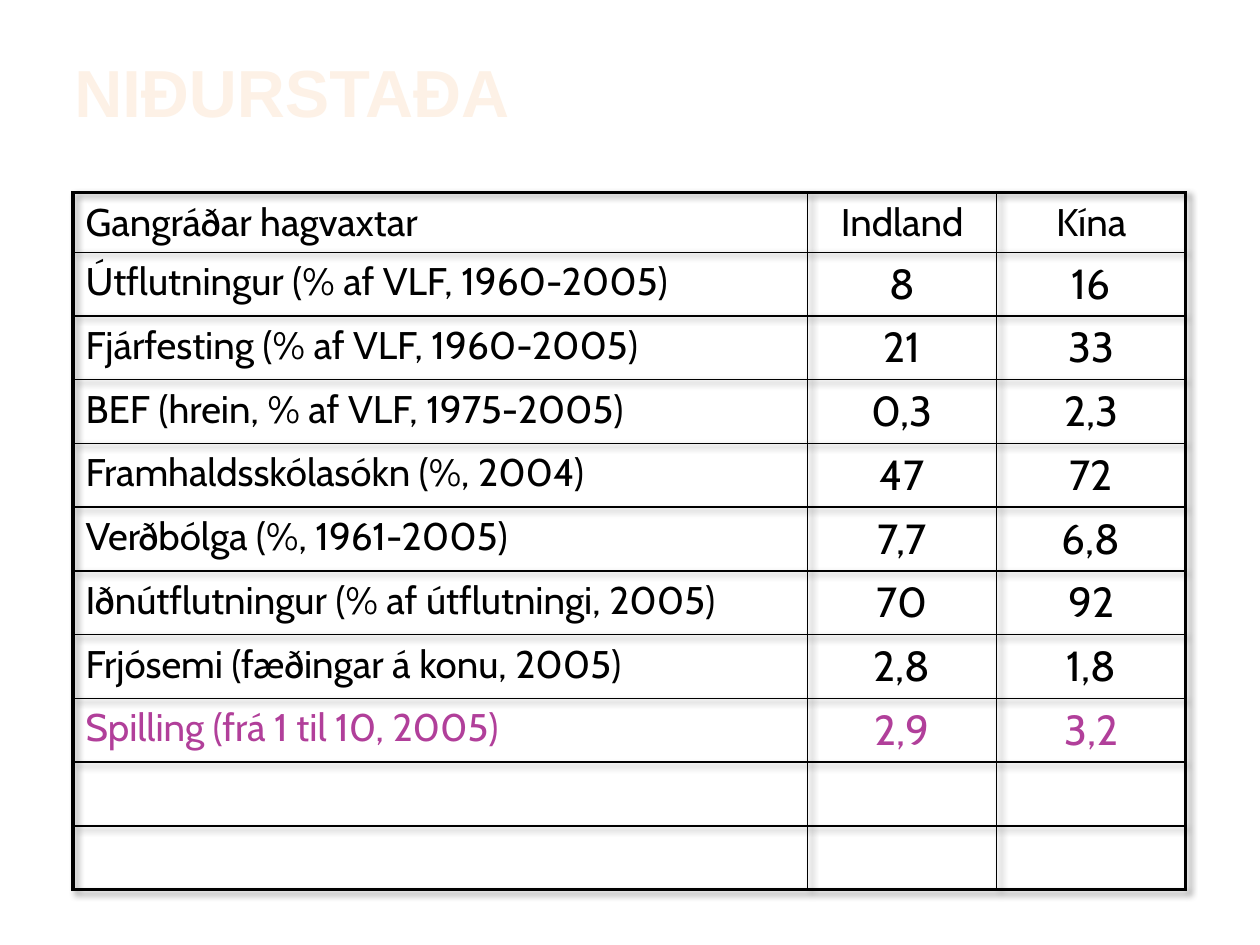
from lxml import etree
from pptx import Presentation
from pptx.dml.color import RGBColor
from pptx.enum.text import MSO_ANCHOR, PP_ALIGN
from pptx.oxml.ns import qn
from pptx.util import Inches, Pt

LEFT, CENTER = PP_ALIGN.LEFT, PP_ALIGN.CENTER
BOTTOM = MSO_ANCHOR.BOTTOM
BLACK, PLUM, CREAM = "000000", "B13F9A", "FDF1E6"
THIN, THICK = 1, 2.25
WIDTHS = [5.83, 1.5, 1.5]
HEAD, TOTAL = 0.47, 5.53
ROWS = [
    ("Gangráðar hagvaxtar", "Indland", "Kína"),
    ("Útflutningur (% af VLF, 1960-2005)", "8", "16"),
    ("Fjárfesting (% af VLF, 1960-2005)", "21", "33"),
    ("BEF (hrein, % af VLF, 1975-2005)", "0,3", "2,3"),
    ("Framhaldsskólasókn (%, 2004)", "47", "72"),
    ("Verðbólga (%, 1961-2005)", "7,7", "6,8"),
    ("Iðnútflutningur (% af útflutningi, 2005)", "70", "92"),
    ("Frjósemi (fæðingar á konu, 2005)", "2,8", "1,8"),
    ("Spilling (frá 1 til 10, 2005)", "2,9", "3,2"),
    ("", "", ""),
    ("", "", ""),
]
PLUM_ROW = 8


def paint(color, value):
    color.rgb = RGBColor.from_string(value)


def add_run(para, text, size, font, color, bold=False):
    run = para.add_run()
    run.text = text
    run.font.size = Pt(size)
    run.font.name = font
    run.font.bold = bold
    paint(run.font.color, color)


def add_title(slide, text):
    title = slide.shapes.title
    title.left, title.top = Inches(0.49), Inches(0.24)
    title.width, title.height = Inches(8.9), Inches(0.85)
    frame = title.text_frame
    frame.vertical_anchor = BOTTOM
    para = frame.paragraphs[0]
    para.alignment = LEFT
    add_run(para, text, 38, "Arial", CREAM, True)


def add_edge(cell, side, width):
    props = cell._tc.get_or_add_tcPr()
    line = etree.SubElement(props, qn("a:ln" + side), w=str(Pt(width)))
    fill = etree.SubElement(line, qn("a:solidFill"))
    etree.SubElement(fill, qn("a:srgbClr"), val=BLACK)


def add_shadow(table):
    props = table._tbl.tblPr
    effects = etree.Element(qn("a:effectLst"))
    props.insert(0, effects)
    shadow = etree.SubElement(
        effects, qn("a:outerShdw"), blurRad=str(Pt(4)), dist=str(Pt(3)),
        dir="2700000", algn="tl", rotWithShape="0")
    color = etree.SubElement(shadow, qn("a:srgbClr"), val=BLACK)
    etree.SubElement(color, qn("a:alpha"), val="40000")


def fill_cell(cell, text, row, col):
    outer = {
        "L": col == 0,
        "R": col == len(WIDTHS) - 1,
        "T": row == 0,
        "B": row == len(ROWS) - 1,
    }
    for side, thick in outer.items():
        add_edge(cell, side, THICK if thick else THIN)
    cell.fill.background()
    if text:
        para = cell.text_frame.paragraphs[0]
        para.alignment = CENTER if col else LEFT
        size = 24 if row and col else 22
        add_run(para, text, size, "Cabin", PLUM if row == PLUM_ROW else BLACK)


def add_grid(slide):
    frame = slide.shapes.add_table(
        len(ROWS), len(WIDTHS), Inches(0.58), Inches(1.53),
        Inches(sum(WIDTHS)), Inches(TOTAL))
    table = frame.table
    table.first_row = table.horz_banding = False
    add_shadow(table)
    for col, width in enumerate(WIDTHS):
        table.columns[col].width = Inches(width)
    body = (TOTAL - HEAD) / (len(ROWS) - 1)
    for row, texts in enumerate(ROWS):
        table.rows[row].height = Inches(body if row else HEAD)
        for col, text in enumerate(texts):
            fill_cell(table.cell(row, col), text, row, col)


def main():
    deck = Presentation()
    deck.slide_width, deck.slide_height = Inches(10), Inches(7.5)
    slide = deck.slides.add_slide(deck.slide_layouts[5])
    add_title(slide, "NIÐURSTAÐA")
    add_grid(slide)
    deck.save("out.pptx")


if __name__ == "__main__":
    main()
